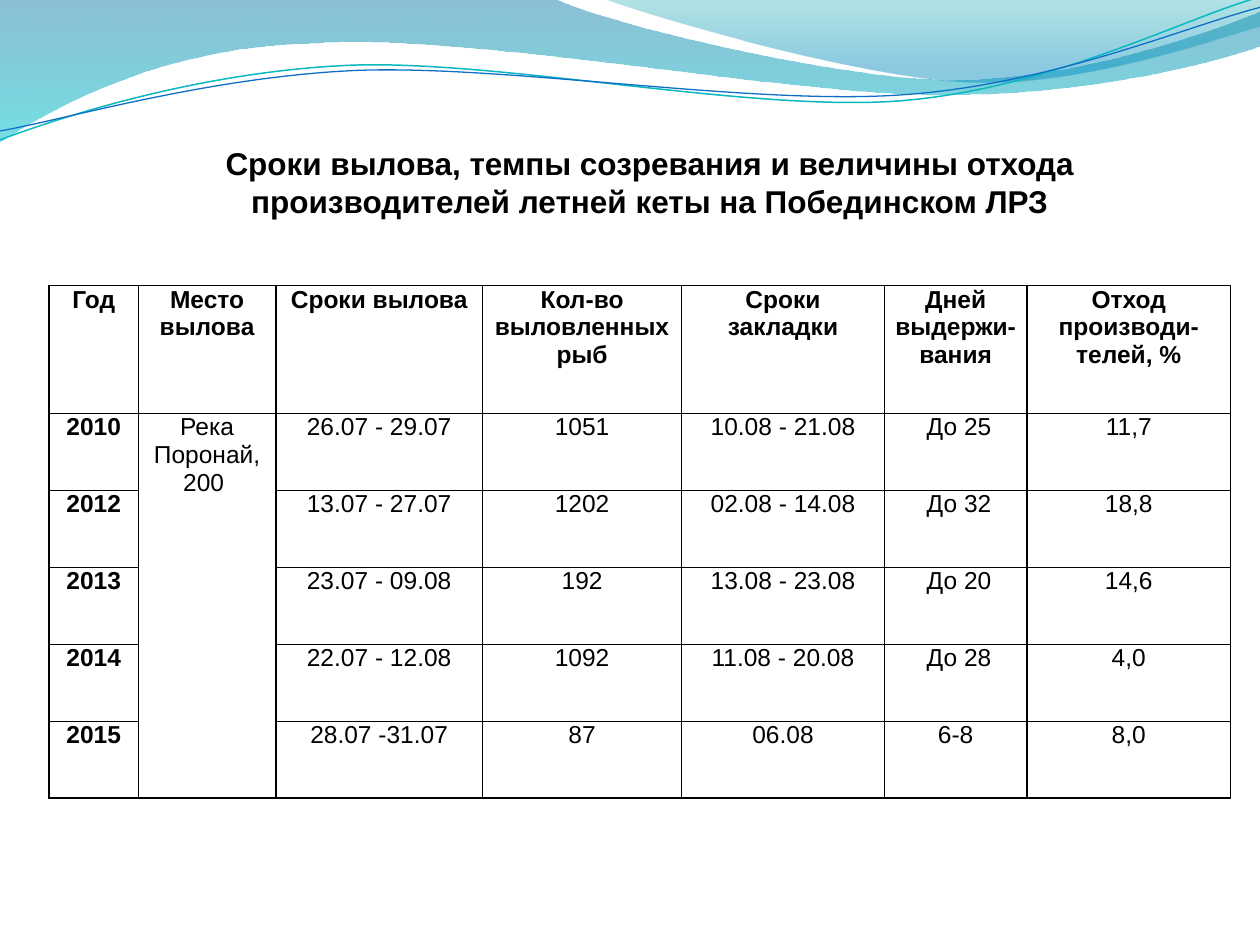
from lxml import etree
from pptx import Presentation
from pptx import util as u
from pptx.dml.color import RGBColor
from pptx.enum import text
from pptx.oxml.ns import qn

BLACK = RGBColor(0x00, 0x00, 0x00)
WHITE = RGBColor(0xFF, 0xFF, 0xFF)
DEEP_BLUE = RGBColor(0x00, 0x74, 0xA1)
CYAN = RGBColor(0x00, 0xC6, 0xCF)
TEAL = RGBColor(0x00, 0xA1, 0xA9)
SKY_BLUE = RGBColor(0x00, 0x8B, 0xBF)
LINE_TEAL = RGBColor(0x0A, 0xB8, 0xBF)
LINE_BLUE = RGBColor(0x0F, 0x6F, 0xC6)
FONT = "Arial"
CURVE_ROTATION = 357.3

TITLE = ("Сроки вылова, темпы созревания и величины отхода "
         "производителей летней кеты на Побединском ЛРЗ")
HEADERS = ["Год", "Место вылова", "Сроки вылова", "Кол-во\nвыловленных \nрыб",
           "Сроки закладки", "Дней\nвыдержи-вания", "Отход производи-телей, %"]
RECORDS = [
    ["2010", "Река Поронай, 200 ", "26.07 - 29.07", "1051", "10.08 - 21.08", " До 25", "11,7"],
    ["2012", "", "13.07 - 27.07", "1202", "02.08 - 14.08", " До 32", "18,8"],
    ["2013", "", "23.07 - 09.08", "192", "13.08 - 23.08", " До 20", "14,6"],
    ["2014", "", "22.07 - 12.08", "1092", "11.08 - 20.08", " До 28", "4,0"],
    ["2015", "", "28.07 -31.07", "87", "06.08", "6-8", "8,0"],
]
COLUMN_WIDTHS = [1.8, 2.77, 4.17, 4.01, 4.09, 2.87, 4.11]
HEADER_HEIGHT, RECORD_HEIGHT = 2.58, 1.55

LEFT_WAVE = [
    (0, 0), (11.18, -0.03),
    (12.09, 0.43, 16.87, 1.6, 19.25, 1.6), (21.67, 1.6, 24.33, 0.66, 25.4, 0.23),
    (25.43, 0.91),
    (24.97, 1.12, 22.1, 1.93, 18.95, 1.91), (15.8, 1.91, 9.7, 0.71, 6.53, 0.86),
    (3.28, 0.91, 1.17, 2.11, -0.03, 2.87),
]
RIGHT_WAVE = [
    (12.17, -0.03), (12.93, 0.28, 17.32, 1.57, 19.53, 1.65),
    (21.74, 1.75, 24.41, 0.81, 25.4, 0.53), (25.4, 0),
]
TEAL_CURVE = [
    (-0.05, 2.22), (1.19, 1.82, 4.02, 1.04, 7.05, 1.05),
    (10.05, 1.07, 15.02, 2.37, 18.08, 2.29), (21.13, 2.2, 23.87, 0.91, 25.41, 0.55),
]
BLUE_CURVE = [
    (-0.04, 2.04), (1.16, 1.9, 4.18, 1.15, 7.2, 1.16),
    (10.25, 1.19, 15.13, 2.25, 18.18, 2.17), (21.21, 2.1, 23.93, 1.06, 25.45, 0.75),
]


def add_path(slide, left, top, segments, close):
    """Draw line and cubic segments given in centimetres from the box's corner."""
    ends = [(u.Cm(left + segment[-2]), u.Cm(top + segment[-1])) for segment in segments]
    builder = slide.shapes.build_freeform(*ends[0])
    builder.add_line_segments(ends[1:], close=close)
    shape = builder.convert_to_shape()
    shape.shadow.inherit = False
    lines = list(shape._element.iter(qn("a:lnTo")))
    for line, segment in zip(lines, segments[1:]):
        if len(segment) == 6:
            line.tag = qn("a:cubicBezTo")
            for point in list(line):
                line.remove(point)
            for x, y in zip(segment[::2], segment[1::2]):
                etree.SubElement(line, qn("a:pt"), x=str(u.Cm(left + x) - shape.left),
                                 y=str(u.Cm(top + y) - shape.top))
    return shape


def add_wave(slide, left, top, segments, stops):
    """Draw a wave with a translucent gradient from top to bottom."""
    shape = add_path(slide, left, top, segments, True)
    shape.line.fill.background()
    shape.fill.gradient()
    shape.fill.gradient_angle = 270
    for stop, (position, color, opacity) in zip(shape.fill.gradient_stops, stops):
        stop.position = position
        stop.color.rgb = color
    gradient_colors = shape._element.spPr.find(qn("a:gradFill")).iter(qn("a:srgbClr"))
    for color_element, (position, color, opacity) in zip(gradient_colors, stops):
        etree.SubElement(color_element, qn("a:alpha"), val=str(opacity * 1000))


def add_curve(slide, left, top, segments, color, width):
    """Draw an open curved line, tilted slightly."""
    shape = add_path(slide, left, top, segments, False)
    shape.rotation = CURVE_ROTATION
    shape.fill.background()
    shape.line.color.rgb = color
    shape.line.width = u.Pt(width)


def add_wave_banner(slide, left, top):
    """Draw the two waves and two curves across the slide's top."""
    add_wave(slide, left, top, LEFT_WAVE, [(0, DEEP_BLUE, 45), (1, CYAN, 55)])
    add_wave(slide, left, top, RIGHT_WAVE, [(0, TEAL, 30), (0.8, SKY_BLUE, 45)])
    add_curve(slide, left, top, TEAL_CURVE, LINE_TEAL, 0.85)
    add_curve(slide, left, top, BLUE_CURVE, LINE_BLUE, 0.75)


def format_text(text_frame, size, bold):
    """Centre the paragraphs and set their font."""
    for paragraph in text_frame.paragraphs:
        paragraph.alignment = text.PP_ALIGN.CENTER
        for run in paragraph.runs:
            run.font.name = FONT
            run.font.size = u.Pt(size)
            run.font.bold = bold
            run.font.color.rgb = BLACK


def place_title(slide, left, top, width, height):
    """Move, fill and format the title placeholder."""
    title = slide.shapes.title
    title.left, title.top = u.Cm(left), u.Cm(top)
    title.width, title.height = u.Cm(width), u.Cm(height)
    title.fill.solid()
    title.fill.fore_color.rgb = WHITE
    text_frame = title.text_frame
    text_frame.text = TITLE
    text_frame.word_wrap = True
    text_frame.auto_size = text.MSO_AUTO_SIZE.SHAPE_TO_FIT_TEXT
    text_frame.vertical_anchor = text.MSO_ANCHOR.TOP
    format_text(text_frame, 18, True)


def format_cell(cell, bold):
    """Give a cell its borders, clear fill, margins and font."""
    properties = cell._tc.get_or_add_tcPr()
    for side in ("a:lnL", "a:lnR", "a:lnT", "a:lnB"):
        border = etree.SubElement(properties, qn(side), w=str(u.Pt(1)))
        fill = etree.SubElement(border, qn("a:solidFill"))
        etree.SubElement(fill, qn("a:srgbClr"), val=str(BLACK))
    cell.fill.background()
    cell.margin_left = cell.margin_right = u.Cm(0.18)
    cell.margin_top = cell.margin_bottom = 0
    cell.vertical_anchor = text.MSO_ANCHOR.TOP
    format_text(cell.text_frame, 14, bold)


def add_catch_table(slide, left, top):
    """Add the table of catches by year."""
    rows = [HEADERS] + RECORDS
    heights = [HEADER_HEIGHT] + [RECORD_HEIGHT] * len(RECORDS)
    table = slide.shapes.add_table(
        len(rows), len(HEADERS), u.Cm(left), u.Cm(top),
        u.Cm(sum(COLUMN_WIDTHS)), u.Cm(sum(heights))).table
    for column, width in zip(table.columns, COLUMN_WIDTHS):
        column.width = u.Cm(width)
    for row, height in zip(table.rows, heights):
        row.height = u.Cm(height)
    for row_index, values in enumerate(rows):
        for column_index, value in enumerate(values):
            cell = table.cell(row_index, column_index)
            cell.text_frame.text = value
            format_cell(cell, row_index == 0 or column_index == 0)
    table.cell(1, 1).merge(table.cell(len(RECORDS), 1))


def main():
    """Build and save the presentation."""
    presentation = Presentation()
    presentation.slide_width, presentation.slide_height = u.Cm(25.4), u.Cm(19.05)
    slide = presentation.slides.add_slide(presentation.slide_layouts[5])
    add_wave_banner(slide, 0, 0)
    add_catch_table(slide, 0.99, 5.76)
    place_title(slide, 4.17, 2.77, 17.86, 1.8)
    presentation.save("out.pptx")


if __name__ == "__main__":
    main()
